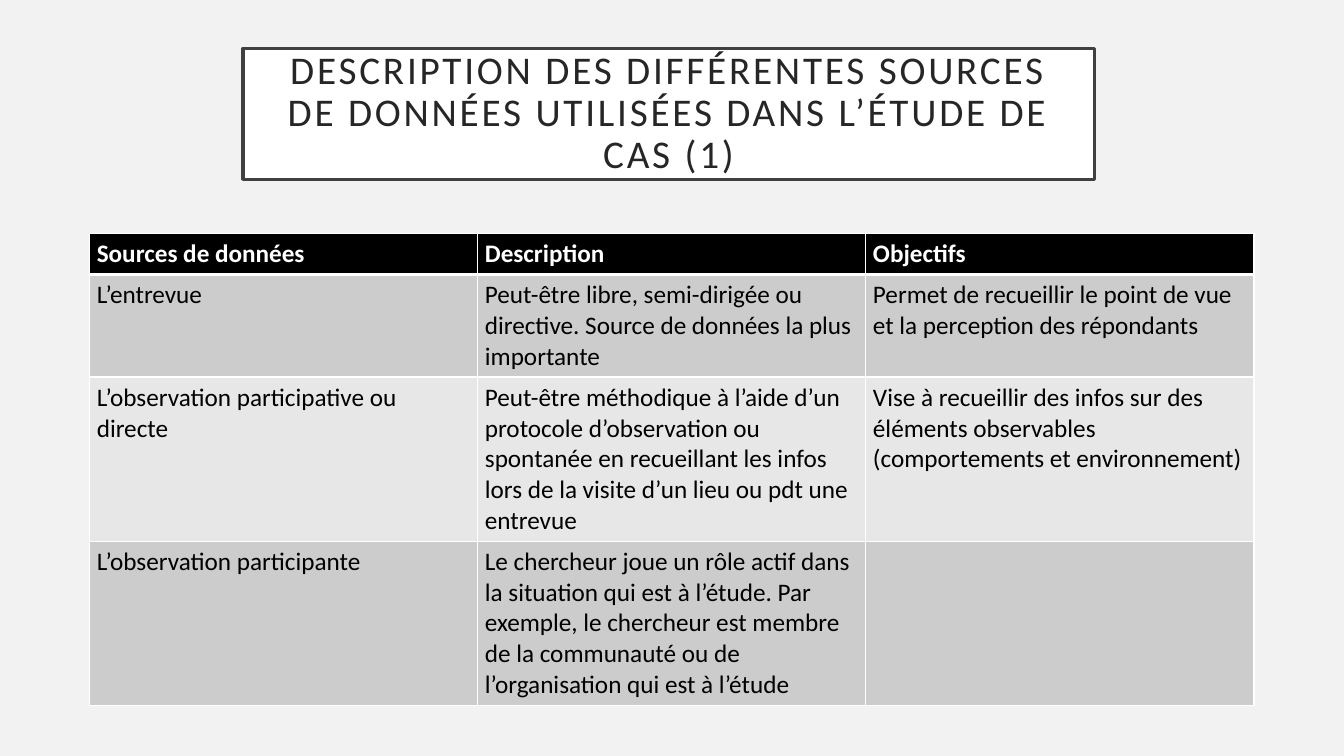
import pptx
import pptx.util
import pptx.dml.color
import pptx.enum.text
import lxml.etree
from pptx.oxml.ns import qn
from pptx.util import Cm

RGBColor = pptx.dml.color.RGBColor
BACKGROUND = RGBColor(0xF2, 0xF2, 0xF2)
WHITE = RGBColor(0xFF, 0xFF, 0xFF)
BLACK = RGBColor(0x00, 0x00, 0x00)
FRAME = RGBColor(0x40, 0x40, 0x40)
TITLE_TEXT = RGBColor(0x26, 0x26, 0x26)
DARK_BAND = RGBColor(0xCC, 0xCC, 0xCC)
LIGHT_BAND = RGBColor(0xE7, 0xE7, 0xE7)

TITLE = "DESCRIPTION DES DIFFÉRENTES SOURCES DE DONNÉES UTILISÉES DANS L’ÉTUDE DE CAS (1)"
ROWS = [
    ("Sources de données", "Description", "Objectifs"),
    (
        "L’entrevue",
        "Peut-être libre, semi-dirigée ou directive. Source de données la plus importante",
        "Permet de recueillir le point de vue et la perception des répondants",
    ),
    (
        "L’observation participative ou directe",
        "Peut-être méthodique à l’aide d’un protocole d’observation ou spontanée "
        "en recueillant les infos lors de la visite d’un lieu ou pdt une entrevue",
        "Vise à recueillir des infos sur des éléments observables "
        "(comportements et environnement)",
    ),
    (
        "L’observation participante",
        "Le chercheur joue un rôle actif dans la situation qui est à l’étude. Par exemple, "
        "le chercheur est membre de la communauté ou de l’organisation qui est à l’étude",
        "",
    ),
]
ROW_HEIGHTS = [1.03, 2.58, 4.13, 4.13]
ROW_FILLS = [BLACK, DARK_BAND, LIGHT_BAND, DARK_BAND]
COLUMN_WIDTH = 9.78


def add_run(paragraph, text, size, color, bold=False):
    run = paragraph.add_run()
    run.text = text
    run.font.name = "Calibri"
    run.font.size = pptx.util.Pt(size)
    run.font.bold = bold
    run.font.color.rgb = color
    return run


def set_borders(cell, bottom_width):
    properties = cell._tc.get_or_add_tcPr()
    widths = {"a:lnL": 1, "a:lnR": 1, "a:lnT": 1, "a:lnB": bottom_width}
    for index, (tag, width) in enumerate(widths.items()):
        line = lxml.etree.Element(qn(tag), w=str(pptx.util.Pt(width)))
        fill = lxml.etree.SubElement(line, qn("a:solidFill"))
        lxml.etree.SubElement(fill, qn("a:srgbClr"), val=str(WHITE))
        properties.insert(index, line)


presentation = pptx.Presentation()
presentation.slide_width = Cm(33.87)
presentation.slide_height = Cm(19.05)
slide = presentation.slides.add_slide(presentation.slide_layouts[5])
slide.background.fill.solid()
slide.background.fill.fore_color.rgb = BACKGROUND

title = slide.shapes.title
title.left, title.top, title.width, title.height = Cm(6.12), Cm(1.22), Cm(21.46), Cm(3.3)
title.fill.solid()
title.fill.fore_color.rgb = WHITE
title.line.color.rgb = FRAME
title.line.width = pptx.util.Pt(2.5)
frame = title.text_frame
frame.word_wrap = True
frame.auto_size = pptx.enum.text.MSO_AUTO_SIZE.NONE
frame.vertical_anchor = pptx.enum.text.MSO_ANCHOR.MIDDLE
frame.margin_left = frame.margin_right = frame.margin_top = frame.margin_bottom = Cm(0.51)
paragraph = frame.paragraphs[0]
paragraph.alignment = pptx.enum.text.PP_ALIGN.CENTER
paragraph.line_spacing = 0.9
title_run = add_run(paragraph, TITLE, 28, TITLE_TEXT)
title_run.font._element.set("spc", "200")

table = slide.shapes.add_table(
    len(ROWS), len(ROWS[0]), Cm(2.26), Cm(5.88),
    Cm(COLUMN_WIDTH * len(ROWS[0])), Cm(sum(ROW_HEIGHTS)),
).table
for column in table.columns:
    column.width = Cm(COLUMN_WIDTH)

for row_index, texts in enumerate(ROWS):
    header = row_index == 0
    table.rows[row_index].height = Cm(ROW_HEIGHTS[row_index])
    for column_index, text in enumerate(texts):
        cell = table.cell(row_index, column_index)
        cell.margin_left = cell.margin_right = Cm(0.18)
        cell.margin_top = cell.margin_bottom = Cm(0.13)
        cell.fill.solid()
        cell.fill.fore_color.rgb = ROW_FILLS[row_index]
        set_borders(cell, 3 if header else 1)
        if text:
            add_run(cell.text_frame.paragraphs[0], text, 18, WHITE if header else BLACK, header)

presentation.save("out.pptx")
